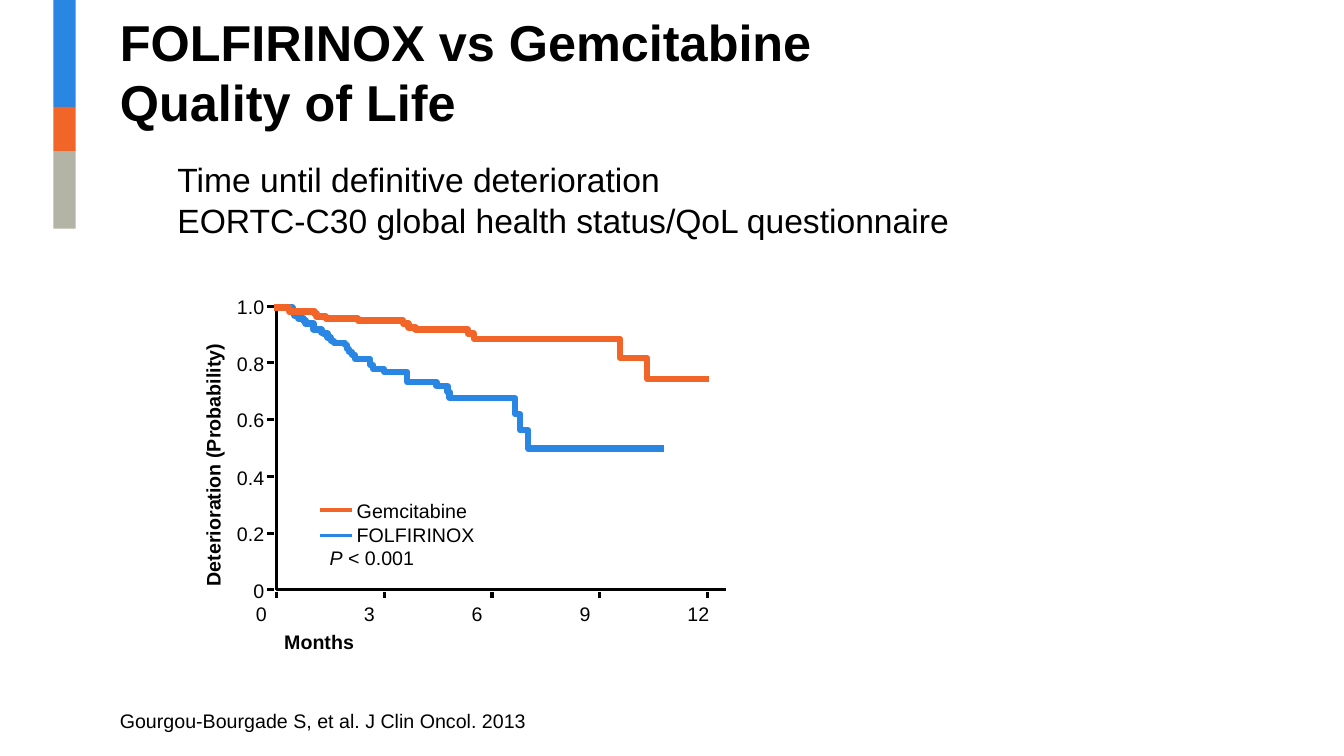
"""Build the FOLFIRINOX vs Gemcitabine quality-of-life slide."""
from pptx import Presentation
from pptx import util as u
from pptx.dml.color import RGBColor
from pptx.enum import shapes, text
from pptx.oxml.ns import qn
from lxml import etree

PX = 9144
THEME = {
    "font": "Arial", "title": 36, "body": 24, "label": 14,
    "axis_line": 2.25, "curve_line": 4.5,
    "black": RGBColor.from_string("000000"),
    "blue": RGBColor.from_string("2986E2"),
    "orange": RGBColor.from_string("F26529"),
    "grey": RGBColor.from_string("B3B3A6"),
}

deck = Presentation()
deck.slide_width, deck.slide_height = 1333 * PX, 750 * PX
page = deck.slides.add_slide(deck.slide_layouts[1])


def write(box, area, lines, size="label", bold=False,
          align=text.PP_ALIGN.LEFT, anchor=text.MSO_ANCHOR.TOP):
    """Place a text shape and fill it with formatted paragraphs."""
    box.left, box.top, box.width, box.height = (value * PX for value in area)
    frame = box.text_frame
    frame.text = lines
    frame.word_wrap = True
    frame.auto_size = text.MSO_AUTO_SIZE.NONE
    frame.vertical_anchor = anchor
    for para in frame.paragraphs:
        para.alignment = align
        para.space_before = u.Pt(0)
        for span in para.runs:
            span.font.name = THEME["font"]
            span.font.size = u.Pt(THEME[size])
            span.font.bold = bold
            span.font.color.rgb = THEME["black"]
    return box


def draw_line(parent, start, end, color="black"):
    """Draw a straight line without a shadow."""
    line = parent.add_connector(shapes.MSO_CONNECTOR.STRAIGHT,
                                *(value * PX for value in start + end))
    line.line.color.rgb = THEME[color]
    line.line.width = u.Pt(THEME["axis_line"])
    etree.SubElement(line._element.spPr, qn("a:effectLst"))


bar_top = 0
for color, height in (("blue", 106), ("orange", 44), ("grey", 77)):
    bar = page.shapes.add_shape(shapes.MSO_SHAPE.RECTANGLE,
                                53 * PX, bar_top * PX, 22 * PX, height * PX)
    bar.shadow.inherit = False
    bar.fill.solid()
    bar.fill.fore_color.rgb = THEME[color]
    bar.line.fill.background()
    bar_top += height

title, body = page.placeholders
write(title, (109, 54, 1115, 82), "FOLFIRINOX vs Gemcitabine\vQuality of Life",
      "title", True, anchor=text.MSO_ANCHOR.BOTTOM)
write(body, (166, 153, 1026, 502),
      "Time until definitive deterioration\v"
      "EORTC-C30 global health status/QoL questionnaire", "body")
body_format = body.text_frame.paragraphs[0]._p.get_or_add_pPr()
body_format.set("marL", "0")
body_format.set("indent", "0")
etree.SubElement(body_format, qn("a:buNone"))

write(page.shapes.add_textbox(0, 0, 0, 0), (109, 698, 936, 34),
      "Gourgou-Bourgade S, et al. J Clin Oncol. 2013",
      anchor=text.MSO_ANCHOR.BOTTOM)

folfirinox_drops = [
    (290, 309), (292, 313), (296, 316), (301, 318), (303, 321), (311, 327),
    (319, 330), (321, 331), (325, 335), (328, 338), (331, 340), (342, 342),
    (344, 346), (346, 349), (349, 352), (352, 356), (367, 362), (370, 366),
    (381, 369), (404, 379), (433, 383), (444, 389), (446, 395), (511, 411),
    (516, 427), (524, 445)]
gemcitabine_drops = [
    (287, 309), (312, 311), (314, 314), (323, 316), (355, 318), (400, 321),
    (405, 325), (412, 327), (464, 331), (470, 336), (615, 355), (642, 376)]
curves = []
for drops, end_x, color in ((folfirinox_drops, 659, "blue"),
                            (gemcitabine_drops, 703, "orange")):
    points, level = [(272, 305)], 305
    for x, y in drops:
        points += [(x, level), (x, y)]
        level = y
    curves.append((page.shapes, points + [(end_x, level)], color, "curve_line"))

axes = page.shapes.add_group_shape().shapes
curves.append((axes, [(274, 303), (274, 585), (720, 585)], "black", "axis_line"))
for parent, points, color, weight in curves:
    builder = parent.build_freeform(*points[0], scale=PX)
    builder.add_line_segments(points[1:], close=False)
    outline = builder.convert_to_shape()
    outline.shadow.inherit = False
    outline.fill.background()
    outline.line.color.rgb = THEME[color]
    outline.line.width = u.Pt(THEME[weight])

for step, label in enumerate(("1.0", "0.8", "0.6", "0.4", "0.2", "0")):
    y = round(304 + 56.2 * step)
    draw_line(axes, (265, y), (272, y))
    write(page.shapes.add_textbox(0, 0, 0, 0), (210, y - 16, 62, 34), label,
          align=text.PP_ALIGN.RIGHT)

for step, label in enumerate(("0", "3", "6", "9", "12")):
    x = 274 + 107 * step
    draw_line(axes, (x, 587), (x, 593))
    write(page.shapes.add_textbox(0, 0, 0, 0), (x - 30, 592, 62, 34), label)

legend = write(page.shapes.add_textbox(0, 0, 0, 0), (317, 490, 277, 81),
               "Gemcitabine\vFOLFIRINOX\nP < 0.001")
names, p_value = legend.text_frame.paragraphs
names._p.get_or_add_pPr().set("marL", str(27 * PX))
letter = p_value.runs[0]
letter.text = "P"
letter.font.italic = True
remainder = p_value.add_run()
remainder.text = " < 0.001"
remainder.font.name = THEME["font"]
remainder.font.size = u.Pt(THEME["label"])
remainder.font.color.rgb = THEME["black"]
for y, color in ((506, "orange"), (531, "blue")):
    draw_line(page.shapes, (317, y), (349, y), color)

write(page.shapes.add_textbox(0, 0, 0, 0), (272, 620, 448, 34), "Months", bold=True)
axis_title = write(page.shapes.add_textbox(0, 0, 0, 0), (60, 423, 303, 34),
                   "Deterioration (Probability)", bold=True)
axis_title.rotation = 270

deck.save("out.pptx")
